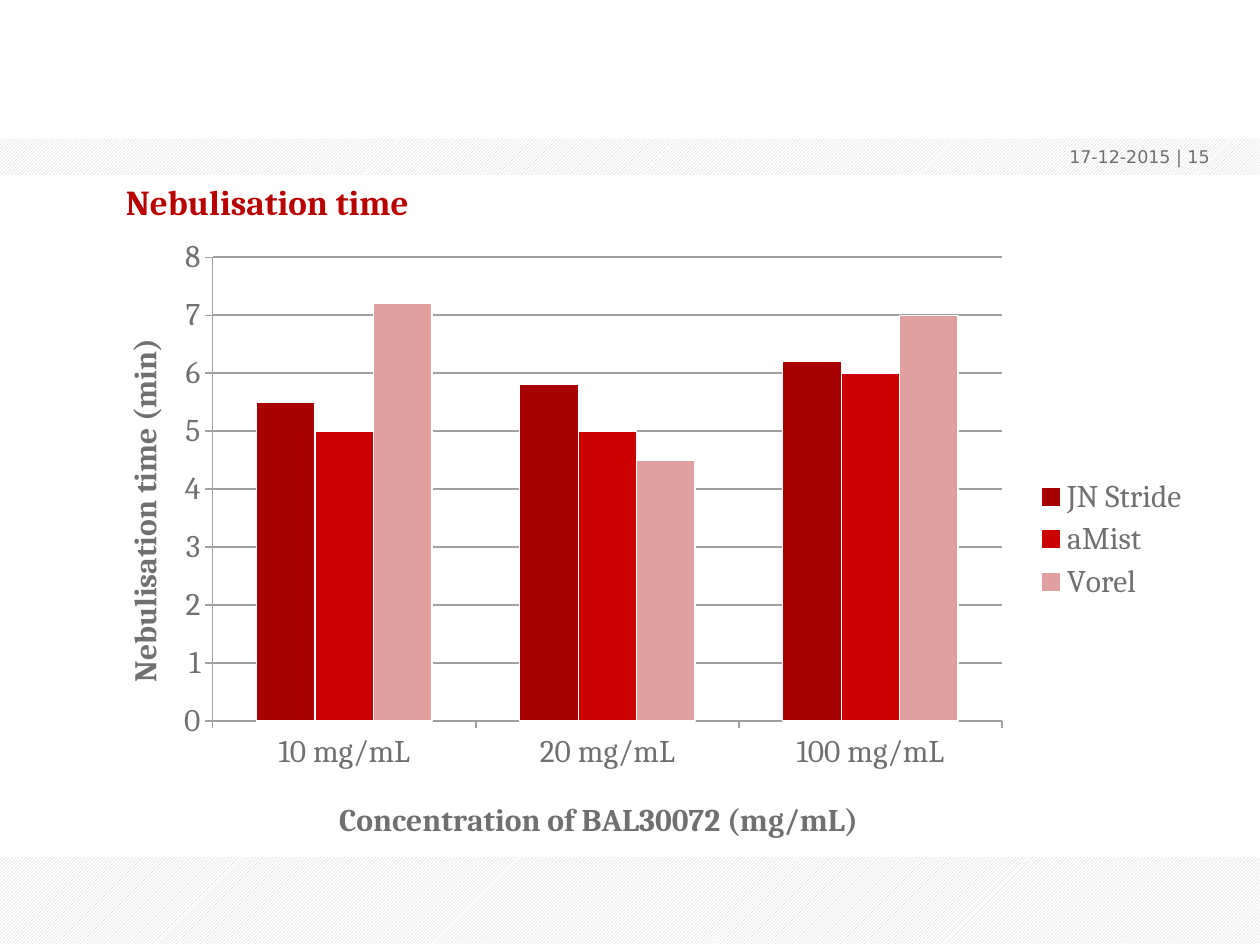
from pptx import Presentation
from pptx.chart.data import CategoryChartData
from pptx.dml.color import RGBColor
from pptx.enum.chart import XL_CHART_TYPE, XL_LEGEND_POSITION, XL_TICK_MARK
from pptx.enum.dml import MSO_PATTERN
from pptx.enum.shapes import MSO_SHAPE
from pptx.enum.text import MSO_ANCHOR, PP_ALIGN
from pptx.oxml import parse_xml
from pptx.oxml.ns import nsdecls
from pptx.util import Pt

COLUMN = XL_CHART_TYPE.COLUMN_CLUSTERED
LEGEND_RIGHT = XL_LEGEND_POSITION.RIGHT
OUTSIDE = XL_TICK_MARK.OUTSIDE
HATCH = MSO_PATTERN.LIGHT_UPWARD_DIAGONAL
TOP, MIDDLE = MSO_ANCHOR.TOP, MSO_ANCHOR.MIDDLE
LEFT, RIGHT = PP_ALIGN.LEFT, PP_ALIGN.RIGHT

COLORS = {name: RGBColor.from_string(value) for name, value in {
    "white": "FFFFFF", "hatch": "C8C8C8", "text": "707070", "title": "B90000",
    "axis": "A0A0A0", "dark": "A80000", "red": "CC0000", "pink": "E0A0A0",
}.items()}


def add_text(slide, box, text, font_name, size, color, bold=False,
             align=LEFT, anchor=MIDDLE, inset=(0, 0)):
    frame = slide.shapes.add_textbox(*map(Pt, box)).text_frame
    frame.word_wrap = True
    frame.vertical_anchor = anchor
    frame.margin_left, frame.margin_top = map(Pt, inset)
    frame.margin_right = frame.margin_bottom = 0
    paragraph = frame.paragraphs[0]
    paragraph.alignment = align
    run = paragraph.add_run()
    run.text = text
    run.font.name, run.font.size, run.font.bold = font_name, Pt(size), bold
    run.font.color.rgb = COLORS[color]


def set_layout(element, index, **fractions):
    """Place a chart part by fractions of the chart area."""
    for old_layout in element.xpath("./c:layout"):
        element.remove(old_layout)
    inner = '<c:layoutTarget val="inner"/>' if index == 0 else ""
    modes = "".join(f'<c:{axis}Mode val="edge"/>' for axis in "xy")
    values = "".join(f'<c:{key} val="{value}"/>' for key, value in fractions.items())
    element.insert(index, parse_xml(
        f'<c:layout {nsdecls("c")}><c:manualLayout>{inner}{modes}{values}'
        "</c:manualLayout></c:layout>"))


presentation = Presentation()
presentation.slide_width, presentation.slide_height = Pt(720), Pt(540)
slide = presentation.slides.add_slide(presentation.slide_layouts[6])

# Hatched bands
for top, height in ((79.2, 20.88), (489.6, 49.68)):
    band = slide.shapes.add_shape(MSO_SHAPE.RECTANGLE, 0, Pt(top), Pt(720), Pt(height))
    band.shadow.inherit = False
    band.line.fill.background()
    band.fill.patterned()
    band.fill.pattern = HATCH
    band.fill.fore_color.rgb = COLORS["hatch"]
    band.fill.back_color.rgb = COLORS["white"]

# Date, page number and title
add_text(slide, (519.12, 79.2, 149.76, 20.88), "17-12-2015",
         "DejaVu Sans", 10, "text", align=RIGHT)
add_text(slide, (668.88, 79.2, 51.12, 20.88), " | 15", "DejaVu Sans", 10, "text")
add_text(slide, (0, 95.04, 720, 33.84), "Nebulisation time",
         "Cambria", 20, "title", bold=True, anchor=TOP, inset=(72, 8))

# Chart
chart_data = CategoryChartData()
chart_data.categories = ["10 mg/mL", "20 mg/mL", "100 mg/mL"]
devices = (
    ("JN Stride", (5.5, 5.8, 6.2), "dark"),
    ("aMist", (5, 5, 6), "red"),
    ("Vorel", (7.2, 4.5, 7), "pink"),
)
for name, values, _ in devices:
    chart_data.add_series(name, values)
chart = slide.shapes.add_chart(
    COLUMN, Pt(48.24), Pt(128.88), Pt(637.92), Pt(362.16), chart_data).chart
chart.has_title = False
chart.font.name, chart.font.size = "Cambria", Pt(18)
chart.font.color.rgb = COLORS["text"]

plot = chart.plots[0]
plot.gap_width, plot.overlap = 150, 0
plot.vary_by_categories = False
for series, (_, _, color) in zip(plot.series, devices):
    series.format.fill.solid()
    series.format.fill.fore_color.rgb = COLORS[color]
    series.format.line.color.rgb = COLORS["white"]
    series.format.line.width = Pt(0.75)

# Axes
for axis, title in ((chart.category_axis, "Concentration of BAL30072 (mg/mL)"),
                    (chart.value_axis, "Nebulisation time (min)")):
    axis.major_tick_mark = OUTSIDE
    axis.format.line.color.rgb = COLORS["axis"]
    axis.format.line.width = Pt(0.75)
    run = axis.axis_title.text_frame.paragraphs[0].add_run()
    run.text = title
    run.font.name, run.font.size, run.font.bold = "Cambria", Pt(18), True
    run.font.color.rgb = COLORS["text"]
value_axis = chart.value_axis
value_axis.minimum_scale, value_axis.maximum_scale, value_axis.major_unit = 0, 8, 1
value_axis.has_major_gridlines = True
value_axis.major_gridlines.format.line.color.rgb = COLORS["axis"]
value_axis.major_gridlines.format.line.width = Pt(1)

# Legend
chart.has_legend = True
chart.legend.position = LEGEND_RIGHT
chart.legend.include_in_layout = False
chart.legend.font.name, chart.legend.font.size = "Cambria", Pt(18)
chart.legend.font.color.rgb = COLORS["text"]

# Placement of the chart parts
category_title, value_title = chart.element.xpath(".//c:title")
value_body = value_title.xpath(".//a:bodyPr")[0]
value_body.set("rot", "-5400000")
value_body.set("vert", "horz")
set_layout(chart.element.xpath(".//c:plotArea")[0], 0, x=0.115, y=0.05, w=0.707, h=0.732)
set_layout(category_title, 1, x=0.223, y=0.895)
set_layout(value_title, 1, x=0.03, y=0.17)
set_layout(chart.element.xpath(".//c:legend")[0], 1, x=0.845, y=0.39, w=0.15, h=0.21)

presentation.save("out.pptx")
